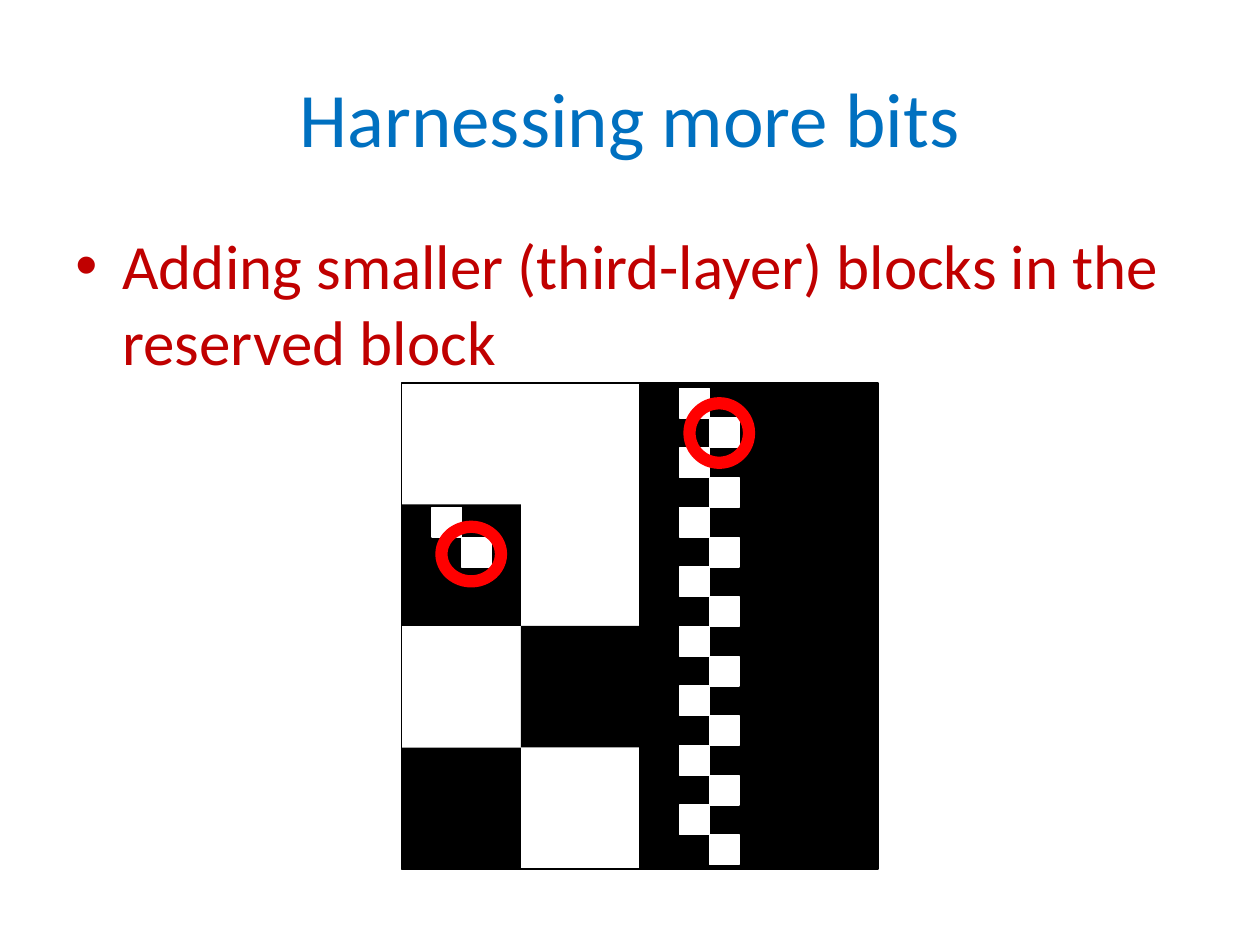
from pptx import Presentation
from pptx.dml.color import RGBColor
from pptx.enum.shapes import MSO_SHAPE
from pptx.enum.text import MSO_ANCHOR, PP_ALIGN
from pptx.oxml.ns import qn
from pptx.util import Cm, Pt
from lxml.etree import SubElement

BLUE = RGBColor(0x00, 0x70, 0xC0)
CRIMSON = RGBColor(0xC0, 0x00, 0x00)
RED = RGBColor(0xFF, 0x00, 0x00)
BLACK = RGBColor(0x00, 0x00, 0x00)
WHITE = RGBColor(0xFF, 0xFF, 0xFF)

# All lengths are in centimetres
LEFT, TOP = 8.1, 7.72
WIDE, HIGH = 2.4, 2.45
BIT = 0.6


def place(shape, x, y, w, h):
    shape.left, shape.top, shape.width, shape.height = map(Cm, (x, y, w, h))


def style(par, size, color):
    for run in par.runs:
        run.font.name = "Calibri"
        run.font.size = Pt(size)
        run.font.color.rgb = color


def add_title(slide, text):
    title = slide.shapes.title
    place(title, 1.27, 0.76, 22.86, 3.18)
    frame = title.text_frame
    frame.text = text
    frame.vertical_anchor = MSO_ANCHOR.MIDDLE
    par = frame.paragraphs[0]
    par.alignment = PP_ALIGN.CENTER
    style(par, 44, BLUE)


def add_bullet(slide, text):
    box = slide.shapes.add_textbox(Cm(1.27), Cm(4.45), Cm(22.86), Cm(12.57))
    frame = box.text_frame
    frame.word_wrap = True
    frame.text = text
    par = frame.paragraphs[0]
    style(par, 36, CRIMSON)
    # Hanging indent with a round bullet
    props = par._p.get_or_add_pPr()
    props.set("marL", str(Cm(0.95)))
    props.set("indent", str(Cm(-0.95)))
    SubElement(props, qn("a:buFont"), typeface="Arial")
    SubElement(props, qn("a:buChar"), char="•")


def add_form(slide, kind, x, y, w, h, fill=None, line=None, weight=0.75):
    form = slide.shapes.add_shape(kind, Cm(x), Cm(y), Cm(w), Cm(h))
    form.shadow.inherit = False
    if fill is None:
        form.fill.background()
    else:
        form.fill.solid()
        form.fill.fore_color.rgb = fill
    if line is None:
        form.line.fill.background()
    else:
        form.line.color.rgb = line
        form.line.width = Pt(weight)


def add_block(slide, x, y, w, h, fill=None, line=None):
    add_form(slide, MSO_SHAPE.RECTANGLE, x, y, w, h, fill, line)


def add_bits(slide, x, y, count):
    """Stack white bits that step between two columns."""
    for row in range(count):
        add_block(slide, x + row % 2 * BIT, y + row * BIT, BIT, BIT,
                  WHITE, WHITE)


def add_ring(slide, x, y, w, h):
    add_form(slide, MSO_SHAPE.OVAL, x, y, w, h, line=RED, weight=7)


def main():
    deck = Presentation()
    deck.slide_width, deck.slide_height = Cm(25.4), Cm(19.05)
    slide = deck.slides.add_slide(deck.slide_layouts[5])

    add_title(slide, "Harnessing more bits")
    add_bullet(slide,
               "Adding smaller (third-layer) blocks in the reserved block")

    # Frame, reserved half and second-layer blocks
    add_block(slide, LEFT, TOP, 9.25, 4 * HIGH, line=BLACK)
    add_block(slide, LEFT + 2 * WIDE, TOP, 4.8, 4 * HIGH, BLACK, BLACK)
    for col, row in ((0, 1), (1, 2), (0, 3)):
        add_block(slide, LEFT + col * WIDE, TOP + row * HIGH, WIDE, HIGH,
                  BLACK)

    # Third-layer bits
    add_bits(slide, 8.71, 10.23, 2)
    add_bits(slide, 13.7, 7.83, 16)

    # Rings around the matching bits
    add_ring(slide, 8.9, 10.62, 1.2, 1.1)
    add_ring(slide, 13.9, 8.13, 1.2, 1.2)

    deck.save("out.pptx")


if __name__ == "__main__":
    main()
